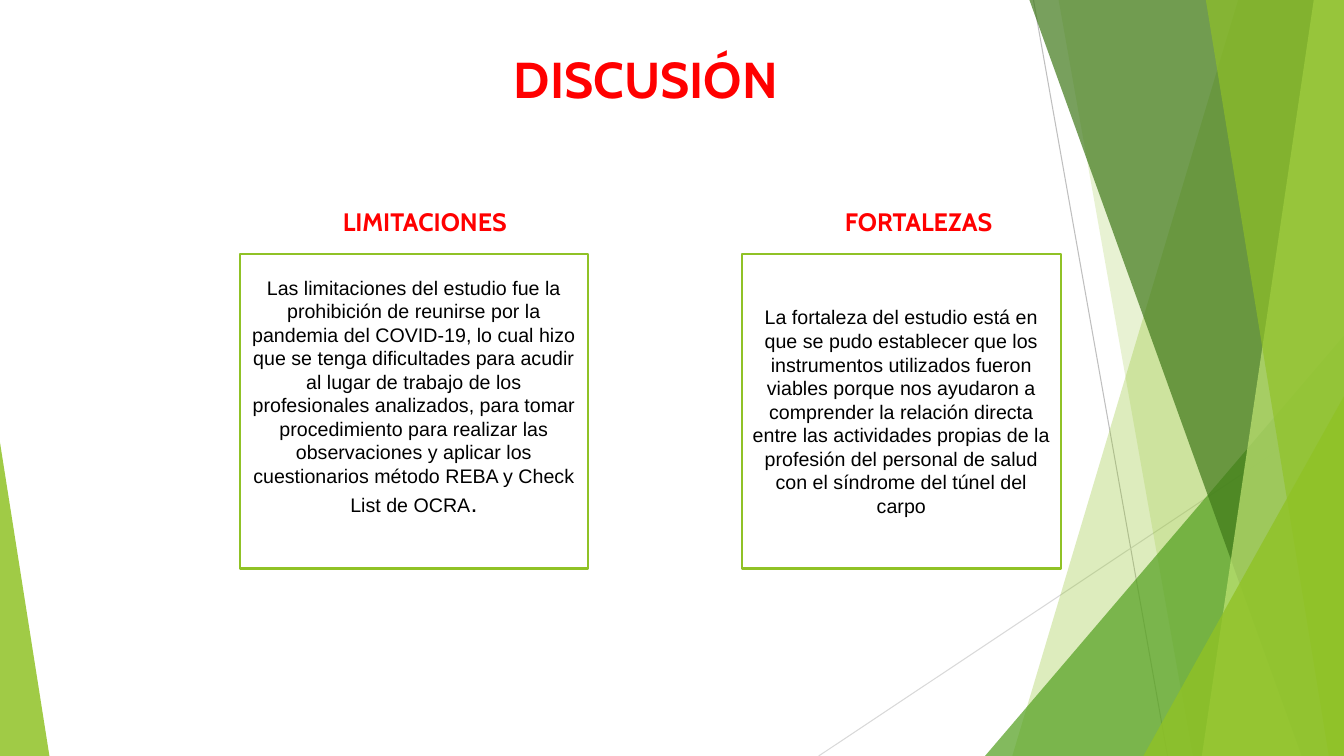
from lxml.etree import SubElement
from pptx import Presentation
from pptx.dml.color import RGBColor
from pptx.enum.shapes import MSO_CONNECTOR, MSO_SHAPE
from pptx.enum.text import MSO_ANCHOR, PP_ALIGN
from pptx.oxml.ns import qn
from pptx.util import Inches, Pt

WIDTH, HEIGHT = 13.33, 7.5
WHITE = RGBColor(0xFF, 0xFF, 0xFF)
BLACK = RGBColor(0, 0, 0)
RED = RGBColor(0xFF, 0, 0)
LIME = RGBColor(0x90, 0xC2, 0x26)
GREEN = RGBColor(0x54, 0xA0, 0x21)
DARK_GREEN = RGBColor(0x3F, 0x78, 0x19)
PALE_LIME = RGBColor(0xC0, 0xE4, 0x74)
GRAY = RGBColor(0xBF, 0xBF, 0xBF)
LIGHT_GRAY = RGBColor(0xD9, 0xD9, 0xD9)

LIMITATIONS = (
    "Las limitaciones del estudio fue la prohibición de reunirse por la pandemia "
    "del COVID-19, lo cual hizo que se tenga dificultades para acudir al lugar de "
    "trabajo de los profesionales analizados, para tomar procedimiento para realizar "
    "las observaciones y aplicar los cuestionarios método REBA y Check List de OCRA"
)
STRENGTHS = (
    "La fortaleza del estudio está en que se pudo establecer que los instrumentos "
    "utilizados fueron viables porque nos ayudaron a comprender la relación directa "
    "entre las actividades propias de la profesión del personal de salud con el "
    "síndrome del túnel del carpo"
)


def add_run(paragraph, text, size, font="Arial", color=BLACK, bold=False):
    run = paragraph.add_run()
    run.text = text
    run.font.name = font
    run.font.size = Pt(size)
    run.font.bold = bold
    run.font.color.rgb = color


def add_heading(slide, box, text, size, align):
    shape = slide.shapes.add_textbox(*map(Inches, box))
    frame = shape.text_frame
    frame.word_wrap = True
    frame.margin_left = frame.margin_right = 0
    paragraph = frame.paragraphs[0]
    paragraph.alignment = align
    add_run(paragraph, text, size, font="Cabin", color=RED, bold=True)


def paint(shape, color, opacity):
    shape.shadow.inherit = False
    shape.line.fill.background()
    shape.fill.solid()
    shape.fill.fore_color.rgb = color
    color_element = shape.fill._xPr.find(qn("a:solidFill"))[0]
    SubElement(color_element, qn("a:alpha")).set("val", str(opacity * 1000))


def add_line(slide, start, end, color):
    line = slide.shapes.add_connector(
        MSO_CONNECTOR.STRAIGHT, *map(Inches, start + end))
    line.line.color.rgb = color
    line.line.width = Pt(0.75)
    SubElement(line._element.spPr, qn("a:effectLst"))


def add_band(slide, top_x, bottom_x, color, opacity):
    corners = [(top_x, 0), (WIDTH, 0), (WIDTH, HEIGHT), (bottom_x, HEIGHT)]
    points = [(Inches(x), Inches(y)) for x, y in corners]
    builder = slide.shapes.build_freeform(*points[0])
    builder.add_line_segments(points[1:], close=True)
    paint(builder.convert_to_shape(), color, opacity)


def add_corner(slide, left, top, width, apex, color, opacity):
    triangle = slide.shapes.add_shape(
        MSO_SHAPE.ISOSCELES_TRIANGLE,
        *map(Inches, (left, top, width, HEIGHT - top)))
    triangle.adjustments[0] = apex
    paint(triangle, color, opacity)


def add_backdrop(slide):
    add_line(slide, (10.25, 0), (11.58, HEIGHT), GRAY)
    add_line(slide, (WIDTH, 4.03), (8.12, HEIGHT), LIGHT_GRAY)
    add_band(slide, 12.28, 10.04, LIME, 30)
    add_band(slide, 10.5, 11.83, LIME, 20)
    add_corner(slide, 9.77, 3.33, 3.56, 1, GREEN, 72)
    add_band(slide, 10.21, 12.91, DARK_GREEN, 70)
    add_band(slide, 13.03, 11.92, PALE_LIME, 70)
    add_band(slide, 11.96, 13.18, LIME, 65)
    add_corner(slide, 11.34, 3.93, 1.99, 1, LIME, 80)
    add_corner(slide, 0, 4.39, 0.49, 0, LIME, 85)


def add_panel(slide, box, heading, text, ending="", bottom_margin=0.05):
    left, top, width, height = box
    add_heading(slide, (left + 1.02, top - 0.52, 2, 0.4), heading, 18, PP_ALIGN.LEFT)
    panel = slide.shapes.add_shape(MSO_SHAPE.RECTANGLE, *map(Inches, box))
    panel.shadow.inherit = False
    panel.fill.solid()
    panel.fill.fore_color.rgb = WHITE
    panel.line.color.rgb = LIME
    panel.line.width = Pt(1.5)
    frame = panel.text_frame
    frame.word_wrap = True
    frame.vertical_anchor = MSO_ANCHOR.MIDDLE
    frame.margin_bottom = Inches(bottom_margin)
    paragraph = frame.paragraphs[0]
    paragraph.alignment = PP_ALIGN.CENTER
    add_run(paragraph, text, 14)
    if ending:
        add_run(paragraph, ending, 18)


def main():
    presentation = Presentation()
    presentation.slide_width = Inches(WIDTH)
    presentation.slide_height = Inches(HEIGHT)
    slide = presentation.slides.add_slide(presentation.slide_layouts[6])
    add_backdrop(slide)
    add_heading(slide, (4.77, 0.43, 3.27, 0.84), "DISCUSIÓN", 36, PP_ALIGN.CENTER)
    add_panel(slide, (2.38, 2.52, 3.45, 3.12), "LIMITACIONES", LIMITATIONS,
              ending=".", bottom_margin=0.34)
    add_panel(slide, (7.36, 2.52, 3.16, 3.12), "FORTALEZAS", STRENGTHS)
    presentation.save("out.pptx")


if __name__ == "__main__":
    main()
